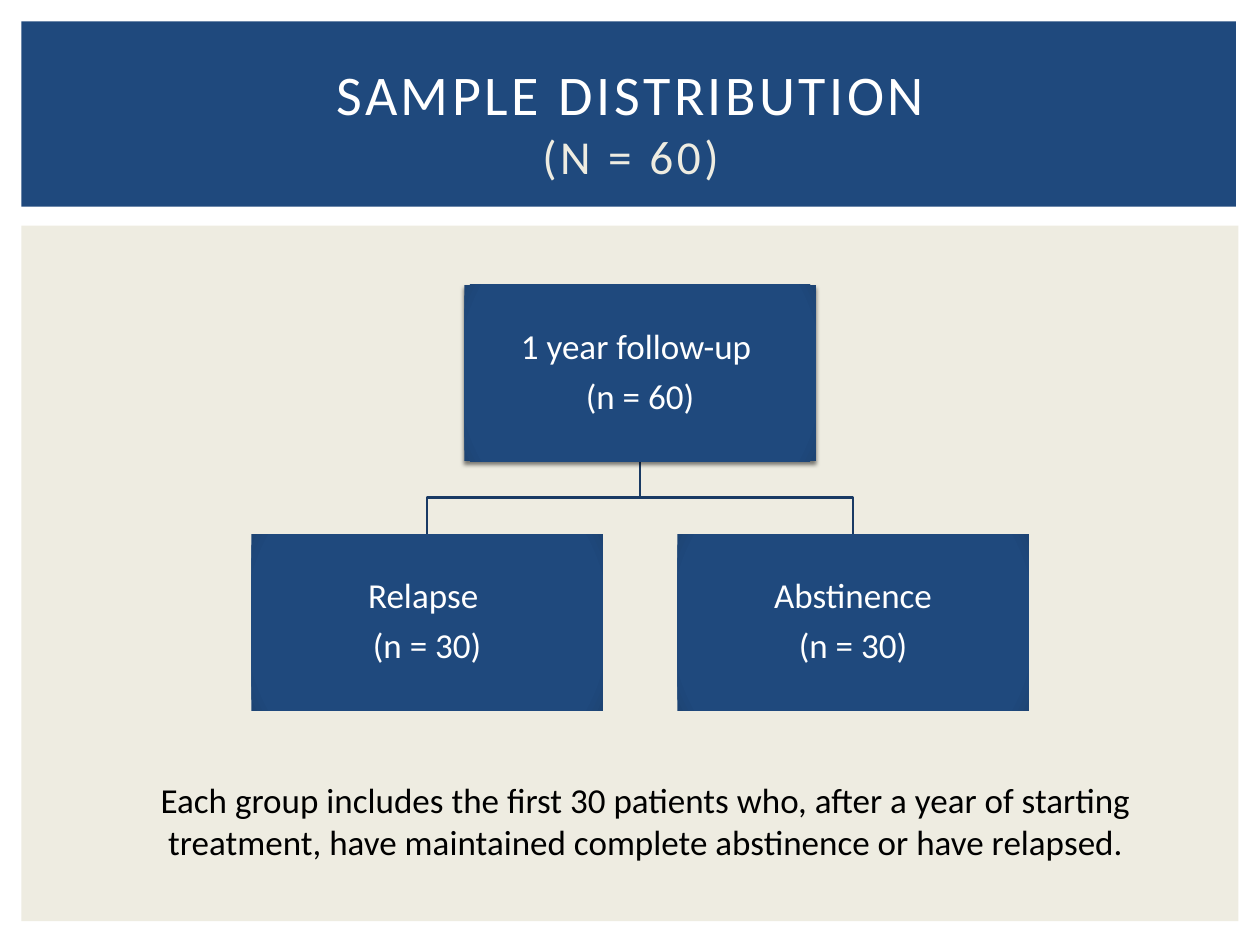
import pptx
import pptx.util
import pptx.dml.color
import pptx.enum.shapes
import pptx.enum.text
import pptx.oxml
import pptx.oxml.ns

Inches = pptx.util.Inches
Pt = pptx.util.Pt
RGBColor = pptx.dml.color.RGBColor
RECTANGLE = pptx.enum.shapes.MSO_SHAPE.RECTANGLE

NAVY = RGBColor(0x1F, 0x49, 0x7D)
EDGE = RGBColor(0x1D, 0x44, 0x74)
BRANCH = RGBColor(0x19, 0x3A, 0x64)
CREAM = RGBColor(0xEE, 0xEC, 0xE1)
WHITE = RGBColor(0xFF, 0xFF, 0xFF)
BLACK = RGBColor(0, 0, 0)

PANELS = [
    ((0.17, 1.79, 9.66, 5.52), CREAM),
    ((0.17, 0.17, 9.64, 1.47), NAVY),
]
TITLE = [("SAMPLE DISTRIBUTION", 32, WHITE), ("(N = 60)", 27, CREAM)]
ROOT = ("1 year follow-up ", "(n = 60)")
GROUPS = [("Relapse ", "(n = 30)"), ("Abstinence", "(n = 30)")]
NOTE = ("Each group includes the first 30 patients who, after a year of starting "
        "treatment, have maintained complete abstinence or have relapsed.")

BOX_WIDTH, BOX_HEIGHT = 2.79, 1.4
TREE_CENTER, ROOT_TOP, GROUP_TOP, GROUP_PITCH = 5.08, 2.26, 4.24, 3.38

FONT = "Calibri"
BOX_FRAME = {
    "word_wrap": True,
    "vertical_anchor": pptx.enum.text.MSO_ANCHOR.MIDDLE,
    "margin_left": Inches(0.01),
    "margin_right": Inches(0.01),
    "margin_top": Inches(0.01),
    "margin_bottom": Inches(0.01),
}
TITLE_FRAME = {"word_wrap": True, "vertical_anchor": pptx.enum.text.MSO_ANCHOR.MIDDLE}
NOTE_FRAME = {"word_wrap": True}
CENTERED = {"alignment": pptx.enum.text.PP_ALIGN.CENTER}
BOX_PARAGRAPH = {**CENTERED, "line_spacing": 0.9, "space_after": Pt(7)}

NAMESPACE = pptx.oxml.ns.nsdecls("a")
GRADIENT = f"""<a:gradFill {NAMESPACE} rotWithShape="1"><a:gsLst>
<a:gs pos="0"><a:srgbClr val="{NAVY}"/></a:gs>
<a:gs pos="90000"><a:srgbClr val="{NAVY}"/></a:gs>
<a:gs pos="100000"><a:srgbClr val="{EDGE}"/></a:gs></a:gsLst>
<a:path path="circle"><a:fillToRect l="100000" t="100000" r="100000" b="100000"/></a:path>
</a:gradFill>"""
SHADOW = f"""<a:outerShdw {NAMESPACE} blurRad="{Pt(2.5)}" dist="{Pt(2)}" dir="5400000" rotWithShape="0">
<a:srgbClr val="000000"><a:alpha val="50000"/></a:srgbClr></a:outerShdw>"""


def apply(target, values):
    for name, value in values.items():
        setattr(target, name, value)


def write(frame, lines, frame_format, paragraph_format, spacing=None):
    apply(frame, frame_format)
    for index, (text, size, color) in enumerate(lines):
        para = frame.add_paragraph() if index else frame.paragraphs[0]
        apply(para, paragraph_format)
        span = para.add_run()
        span.text = text
        apply(span.font, {"name": FONT, "size": Pt(size)})
        span.font.color.rgb = color
        if spacing:
            span.font._element.set("spc", str(spacing * 100))


def add_rectangle(page, place, color):
    box = page.shapes.add_shape(RECTANGLE, *map(Inches, place))
    box.shadow.inherit = False
    box.fill.solid()
    box.fill.fore_color.rgb = color
    box.line.fill.background()
    return box


def add_text(page, place, *content):
    box = page.shapes.add_textbox(*map(Inches, place))
    write(box.text_frame, *content)


def add_branch(page, center):
    start, end = ROOT_TOP + BOX_HEIGHT, GROUP_TOP
    middle = (start + end) / 2
    builder = page.shapes.build_freeform(Inches(TREE_CENTER), Inches(start))
    corners = [(TREE_CENTER, middle), (center, middle), (center, end)]
    builder.add_line_segments([tuple(map(Inches, corner)) for corner in corners], close=False)
    branch = builder.convert_to_shape()
    branch.shadow.inherit = False
    branch.fill.background()
    branch.line.color.rgb = BRANCH
    branch.line.width = Pt(1.5)


def add_node(page, lines, center, top):
    box = add_rectangle(page, (center - BOX_WIDTH / 2, top, BOX_WIDTH, BOX_HEIGHT), NAVY)
    properties = box._element.spPr
    solid = properties.find(pptx.oxml.ns.qn("a:solidFill"))
    properties.replace(solid, pptx.oxml.parse_xml(GRADIENT))
    write(box.text_frame, [(line, 20, WHITE) for line in lines], BOX_FRAME, BOX_PARAGRAPH)
    return box


def main():
    deck = pptx.Presentation()
    apply(deck, {"slide_width": Inches(10), "slide_height": Inches(7.5)})
    page = deck.slides.add_slide(deck.slide_layouts[6])

    for place, color in PANELS:
        add_rectangle(page, place, color)

    middle = (len(GROUPS) - 1) / 2
    centers = [TREE_CENTER + (index - middle) * GROUP_PITCH for index in range(len(GROUPS))]
    for center in centers:
        add_branch(page, center)
    root = add_node(page, ROOT, TREE_CENTER, ROOT_TOP)
    effects = root._element.spPr.find(pptx.oxml.ns.qn("a:effectLst"))
    effects.append(pptx.oxml.parse_xml(SHADOW))
    for lines, center in zip(GROUPS, centers):
        add_node(page, lines, center, GROUP_TOP)

    add_text(page, (0.42, 0.39, 9.17, 1.15), TITLE, TITLE_FRAME, CENTERED, 2)
    add_text(page, (0.91, 6.13, 8.43, 0.77), [(NOTE, 20, BLACK)], NOTE_FRAME, CENTERED)
    deck.save("out.pptx")


if __name__ == "__main__":
    main()
